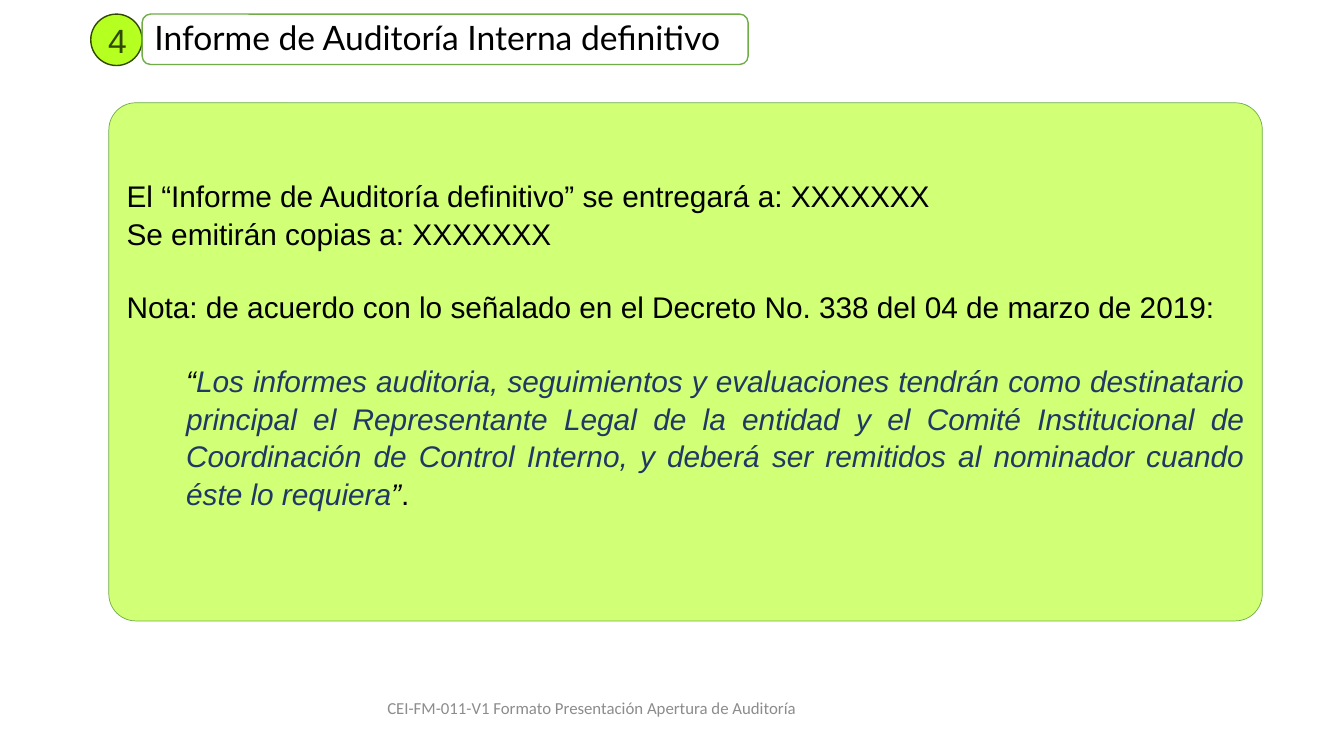
import pptx
import pptx.util
import pptx.dml.color
import pptx.enum.shapes
import pptx.enum.text

Inches, Pt = pptx.util.Inches, pptx.util.Pt
SHAPE = pptx.enum.shapes.MSO_SHAPE
ANCHOR = pptx.enum.text.MSO_ANCHOR
ALIGN = pptx.enum.text.PP_ALIGN


def rgb(value):
    return pptx.dml.color.RGBColor.from_string(value)


class ReportSlide:
    BLACK, NAVY, GREY = "000000", "203864", "8C8C8C"
    LIME, PALE_LIME, WHITE = "B5FF21", "D1FF75", "FFFFFF"
    GREEN, DARK_GREEN = "70AD47", "304800"

    def __init__(self, presentation):
        self.slide = presentation.slides.add_slide(presentation.slide_layouts[6])

    def panel(self, kind, box, fill, line, width, anchor):
        shape = self.slide.shapes.add_shape(kind, *map(Inches, box))
        shape.shadow.inherit = False
        shape.fill.solid()
        shape.fill.fore_color.rgb = rgb(fill)
        shape.line.color.rgb = rgb(line)
        shape.line.width = Pt(width)
        self.prepare(shape.text_frame, anchor)
        return shape

    def label(self, box, anchor):
        shape = self.slide.shapes.add_textbox(*map(Inches, box))
        self.prepare(shape.text_frame, anchor)
        return shape

    def prepare(self, frame, anchor):
        frame.word_wrap = True
        frame.vertical_anchor = anchor

    def add_text(self, shape, runs, font, layout, first=True):
        """Add one paragraph; runs are (text, colour, italic)."""
        frame = shape.text_frame
        paragraph = frame.paragraphs[0] if first else frame.add_paragraph()
        for name, value in layout.items():
            setattr(paragraph, name, value)
        for text, color, italic in runs:
            run = paragraph.add_run()
            run.text = text
            for name, value in {**font, "italic": italic}.items():
                setattr(run.font, name, value)
            run.font.color.rgb = rgb(color)
        return paragraph


def main():
    presentation = pptx.Presentation()
    presentation.slide_width = Inches(13.33)
    presentation.slide_height = Inches(7.5)
    page = ReportSlide(presentation)

    delivery = page.panel(SHAPE.ROUNDED_RECTANGLE, (1.08, 1.02, 11.44, 5.14),
                          page.PALE_LIME, page.GREEN, 0.5, ANCHOR.MIDDLE)
    delivery.adjustments[0] = 0.052
    delivery.text_frame.margin_bottom = Inches(0.41)
    body_font = {"name": "Arial", "size": Pt(21.3)}
    left = {"alignment": ALIGN.LEFT, "line_spacing": 1.05}
    gap = {**left, "space_before": Pt(25.7)}
    statements = [
        ("El “Informe de Auditoría definitivo” se entregará a: XXXXXXX", left),
        ("Se emitirán copias a: XXXXXXX", left),
        ("Nota: de acuerdo con lo señalado en el Decreto No. 338 del 04 de marzo de 2019:", gap),
    ]
    for index, (text, layout) in enumerate(statements):
        page.add_text(delivery, [(text, page.BLACK, False)], body_font, layout, index == 0)
    quote = page.add_text(delivery, [
        ("“", page.BLACK, True),
        ("Los informes auditoria, seguimientos y evaluaciones tendrán como destinatario "
         "principal el Representante Legal de la entidad y el Comité Institucional de "
         "Coordinación de Control Interno, y deberá ser remitidos al nominador cuando "
         "éste lo requiera", page.NAVY, True),
        ("”", page.BLACK, True),
        (".", page.BLACK, False),
    ], body_font, {**gap, "alignment": ALIGN.JUSTIFY}, False)
    quote_format = quote._p.get_or_add_pPr()
    for name, value in {"marL": Inches(0.59), "indent": 0}.items():
        quote_format.set(name, str(int(value)))

    number = page.panel(SHAPE.OVAL, (0.9, 0.14, 0.51, 0.51),
                        page.LIME, page.DARK_GREEN, 1, ANCHOR.MIDDLE)
    page.add_text(number, [("4", page.DARK_GREEN, False)],
                  {"name": "Arial", "size": Pt(24)}, {"alignment": ALIGN.CENTER})

    title = page.panel(SHAPE.ROUNDED_RECTANGLE, (1.41, 0.14, 6.01, 0.5),
                       page.WHITE, page.GREEN, 1, ANCHOR.BOTTOM)
    page.add_text(title, [("Informe de Auditoría Interna definitivo", page.BLACK, False)],
                  {"name": "Lato", "size": Pt(24)},
                  {"alignment": ALIGN.LEFT, "line_spacing": Pt(25)})

    footer = page.label((3.62, 6.82, 4.5, 0.4), ANCHOR.MIDDLE)
    page.add_text(footer,
                  [("CEI-FM-011-V1 Formato Presentación Apertura de Auditoría", page.GREY, False)],
                  {"name": "Calibri", "size": Pt(12)}, {"alignment": ALIGN.CENTER})

    presentation.save("out.pptx")


if __name__ == "__main__":
    main()
